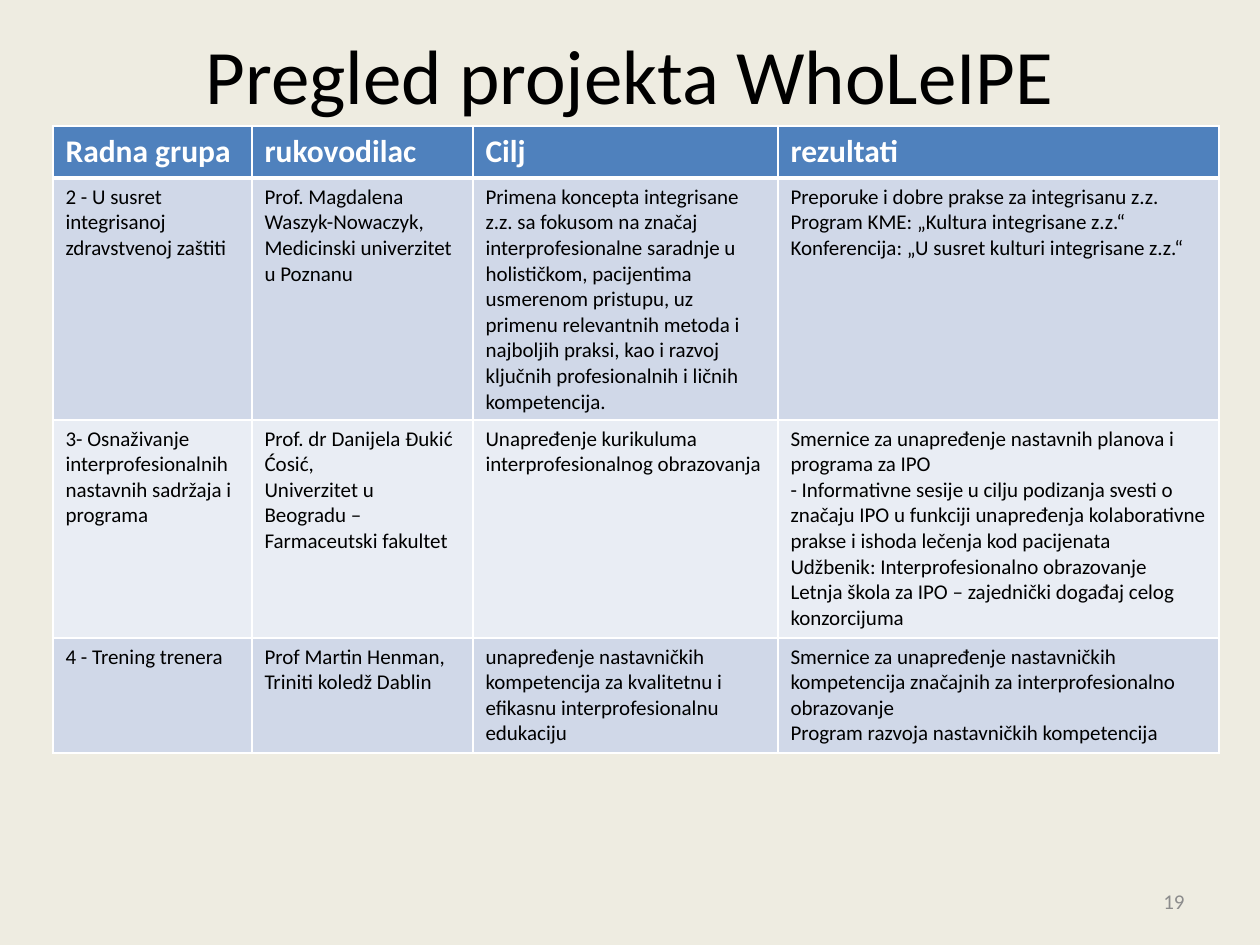
from lxml.etree import SubElement
from pptx import Presentation
from pptx.dml.color import RGBColor
from pptx.enum.text import MSO_ANCHOR as Anchor, PP_ALIGN as Align
from pptx.oxml.ns import qn
from pptx.util import Emu, Pt

# Content: each cell is a list of paragraphs
TITLE = "Pregled projekta WhoLeIPE"
PAGE_NUMBER = "19"
HEADER = [["Radna grupa"], ["rukovodilac"], ["Cilj"], ["rezultati"]]
GROUPS = [
    [
        ["2 - U susret integrisanoj zdravstvenoj zaštiti"],
        ["Prof. Magdalena Waszyk-Nowaczyk, Medicinski univerzitet u Poznanu"],
        ["Primena koncepta integrisane z.z. sa fokusom na značaj "
         "interprofesionalne saradnje u holističkom, pacijentima usmerenom "
         "pristupu, uz primenu relevantnih metoda i najboljih praksi, kao i "
         "razvoj ključnih profesionalnih i ličnih kompetencija."],
        ["Preporuke i dobre prakse za integrisanu z.z.",
         "Program KME: „Kultura integrisane z.z.“",
         "Konferencija: „U susret kulturi integrisane z.z.“"],
    ],
    [
        ["3- Osnaživanje interprofesionalnih nastavnih sadržaja i programa"],
        ["Prof. dr Danijela Đukić Ćosić,",
         "Univerzitet u Beogradu – Farmaceutski fakultet"],
        ["Unapređenje kurikuluma interprofesionalnog obrazovanja"],
        ["Smernice za unapređenje nastavnih planova i programa za IPO",
         "- Informativne sesije u cilju podizanja svesti o značaju IPO u "
         "funkciji unapređenja kolaborativne prakse i ishoda lečenja kod "
         "pacijenata",
         "Udžbenik: Interprofesionalno obrazovanje",
         "Letnja škola za IPO – zajednički događaj celog konzorcijuma"],
    ],
    [
        ["4 - Trening trenera"],
        ["Prof Martin Henman, Triniti koledž Dablin"],
        ["unapređenje nastavničkih kompetencija za kvalitetnu i efikasnu "
         "interprofesionalnu edukaciju"],
        ["Smernice za unapređenje nastavničkih kompetencija značajnih za "
         "interprofesionalno obrazovanje",
         "Program razvoja nastavničkih kompetencija"],
    ],
]

# Layout in px
PX_PER_INCH = 126
PAGE = (1260, 945)
TITLE_BOX = (63, 21, 1134, 105)
NUMBER_BOX = (903, 876, 294, 50)
TABLE_AT = (53, 126)
COLUMNS = [199, 221, 305, 441]
ROWS = [52, 242, 218, 115]

FONT = "Calibri"
CREAM = RGBColor(0xEE, 0xEC, 0xE1)
BLUE = RGBColor(0x4F, 0x81, 0xBD)
BANDS = [RGBColor(0xD0, 0xD8, 0xE8), RGBColor(0xE9, 0xED, 0xF4)]
WHITE = RGBColor(0xFF, 0xFF, 0xFF)
BLACK = RGBColor(0, 0, 0)
GREY = RGBColor(0x8C, 0x8C, 0x8C)


def px(length):
    return Emu(round(length * 914400 / PX_PER_INCH))


def write(frame, lines, size, color, bold=False, align=Align.LEFT):
    frame.word_wrap = True
    for index, line in enumerate(lines):
        para = frame.add_paragraph() if index else frame.paragraphs[0]
        para.alignment = align
        span = para.add_run()
        span.text = line
        font = span.font
        font.name, font.size, font.bold = FONT, Pt(size), bold
        font.color.rgb = color


def add_text(slide, area, text, size, color, align):
    box = slide.shapes.add_textbox(*map(px, area))
    box.text_frame.vertical_anchor = Anchor.MIDDLE
    write(box.text_frame, [text], size, color, align=align)


def set_borders(cell, widths):
    properties = cell._tc.get_or_add_tcPr()
    for index, (side, width) in enumerate(widths.items()):
        line = properties.makeelement(qn(f"a:{side}"), {"w": str(Pt(width))})
        fill = SubElement(line, qn("a:solidFill"))
        SubElement(fill, qn("a:srgbClr"), val=str(WHITE))
        properties.insert(index, line)  # borders come before the cell fill


def add_groups_table(slide):
    rows = [HEADER] + GROUPS
    size = (sum(COLUMNS), sum(ROWS))
    table = slide.shapes.add_table(
        len(rows), len(COLUMNS), *map(px, TABLE_AT + size)).table
    for column, width in zip(table.columns, COLUMNS):
        column.width = px(width)
    for row, height in zip(table.rows, ROWS):
        row.height = px(height)

    for r, row in enumerate(rows):
        for c, lines in enumerate(row):
            cell = table.cell(r, c)
            cell.fill.solid()
            if r == 0:
                cell.fill.fore_color.rgb = BLUE
                write(cell.text_frame, lines, 18, WHITE, bold=True)
            else:
                cell.fill.fore_color.rgb = BANDS[(r - 1) % len(BANDS)]
                write(cell.text_frame, lines, 12, BLACK)
            # A thick rule parts the header from the groups
            set_borders(cell, {"lnL": 1, "lnR": 1,
                               "lnT": 3 if r == 1 else 1,
                               "lnB": 3 if r == 0 else 1})


def main():
    deck = Presentation()
    deck.slide_width, deck.slide_height = map(px, PAGE)
    slide = deck.slides.add_slide(deck.slide_layouts[6])
    slide.background.fill.solid()
    slide.background.fill.fore_color.rgb = CREAM

    # Title, table, page number
    add_text(slide, TITLE_BOX, TITLE, 44, BLACK, Align.CENTER)
    add_groups_table(slide)
    add_text(slide, NUMBER_BOX, PAGE_NUMBER, 12, GREY, Align.RIGHT)
    deck.save("out.pptx")


if __name__ == "__main__":
    main()
